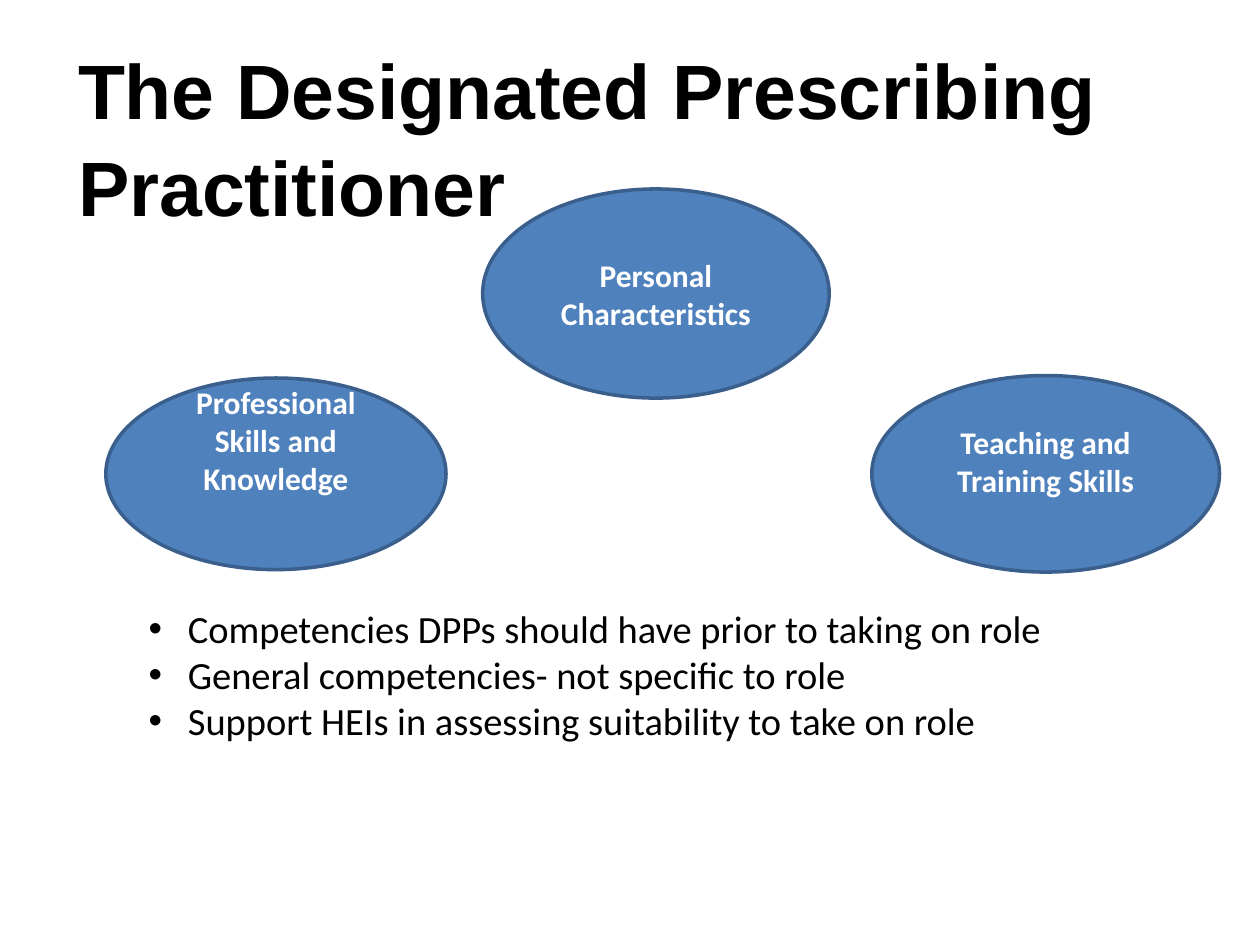
from lxml.etree import SubElement
from pptx import Presentation
from pptx.dml.color import RGBColor
from pptx.enum.shapes import MSO_SHAPE as Shape
from pptx.enum.text import MSO_ANCHOR as Anchor, MSO_AUTO_SIZE as AutoSize, PP_ALIGN as Align
from pptx.oxml.ns import qn
from pptx.util import Pt

BLACK, WHITE, BLUE, DARK_BLUE = "000000", "FFFFFF", "4F81BD", "3A5F8C"
LINE_HEIGHT = 22  # one line of 18 pt Calibri


def color(hex_string):
    return RGBColor.from_string(hex_string)


def add_bullet(para, indent):
    properties = para._p.get_or_add_pPr()
    properties.set("marL", str(Pt(indent)))
    properties.set("indent", str(-Pt(indent)))
    SubElement(properties, qn("a:buFont"), typeface="Arial")
    SubElement(properties, qn("a:buChar"), char="•")


def write(para, text, size, font="Calibri", ink=BLACK, bold=False,
          align=Align.LEFT, spacing=None, bullet_indent=None):
    para.alignment = align
    if spacing:
        para.line_spacing = spacing
    if bullet_indent:
        add_bullet(para, bullet_indent)
    span = para.add_run()
    span.text = text
    span.font.size = Pt(size)
    span.font.name = font
    span.font.bold = bold
    span.font.color.rgb = color(ink)


def place_title(page, box, text):
    title = page.shapes.title
    title.left, title.top, title.width, title.height = map(Pt, box)
    frame = title.text_frame
    frame.auto_size = AutoSize.NONE
    frame.word_wrap = True
    frame.vertical_anchor = Anchor.MIDDLE
    frame.margin_left = frame.margin_right = frame.margin_top = frame.margin_bottom = 0
    write(frame.paragraphs[0], text, 44, font="Arial", bold=True, spacing=1.05)


def place_bullets(page, box, items):
    frame = page.shapes.add_textbox(*map(Pt, box)).text_frame
    frame.word_wrap = True
    for index, item in enumerate(items):
        para = frame.add_paragraph() if index else frame.paragraphs[0]
        write(para, item, 22, bullet_indent=22.5)


def place_ellipse(page, box, text, anchor, lift=0):
    ellipse = page.shapes.add_shape(Shape.OVAL, *map(Pt, box))
    ellipse.shadow.inherit = False
    ellipse.fill.solid()
    ellipse.fill.fore_color.rgb = color(BLUE)
    ellipse.line.color.rgb = color(DARK_BLUE)
    ellipse.line.width = Pt(2)
    frame = ellipse.text_frame
    frame.word_wrap = True
    frame.vertical_anchor = anchor
    frame.margin_bottom = Pt(3.6 + lift)
    write(frame.paragraphs[0], text, 18, ink=WHITE, bold=True, align=Align.CENTER)


def main():
    deck = Presentation()
    deck.slide_width, deck.slide_height = Pt(720), Pt(540)
    page = deck.slides.add_slide(deck.slide_layouts[5])

    # Heading
    place_title(page, (44.6, 23.8, 620, 106.6), "The Designated Prescribing Practitioner")

    # Competencies
    place_bullets(page, (77.8, 342, 612, 113.8), [
        "Competencies DPPs should have prior to taking on role",
        "General competencies- not specific to role",
        "Support HEIs in assessing suitability to take on role",
    ])

    # Three areas; the lower two hold their text one line above the bottom
    place_ellipse(page, (275.8, 108, 198, 119.5), "Personal Characteristics", Anchor.MIDDLE)
    place_ellipse(page, (60.5, 216, 194.4, 109.5), "Professional Skills and Knowledge",
                  Anchor.BOTTOM, lift=LINE_HEIGHT)
    place_ellipse(page, (498.2, 214.6, 198.7, 112.3), "Teaching and Training Skills",
                  Anchor.BOTTOM, lift=LINE_HEIGHT)

    deck.save("out.pptx")


if __name__ == "__main__":
    main()
